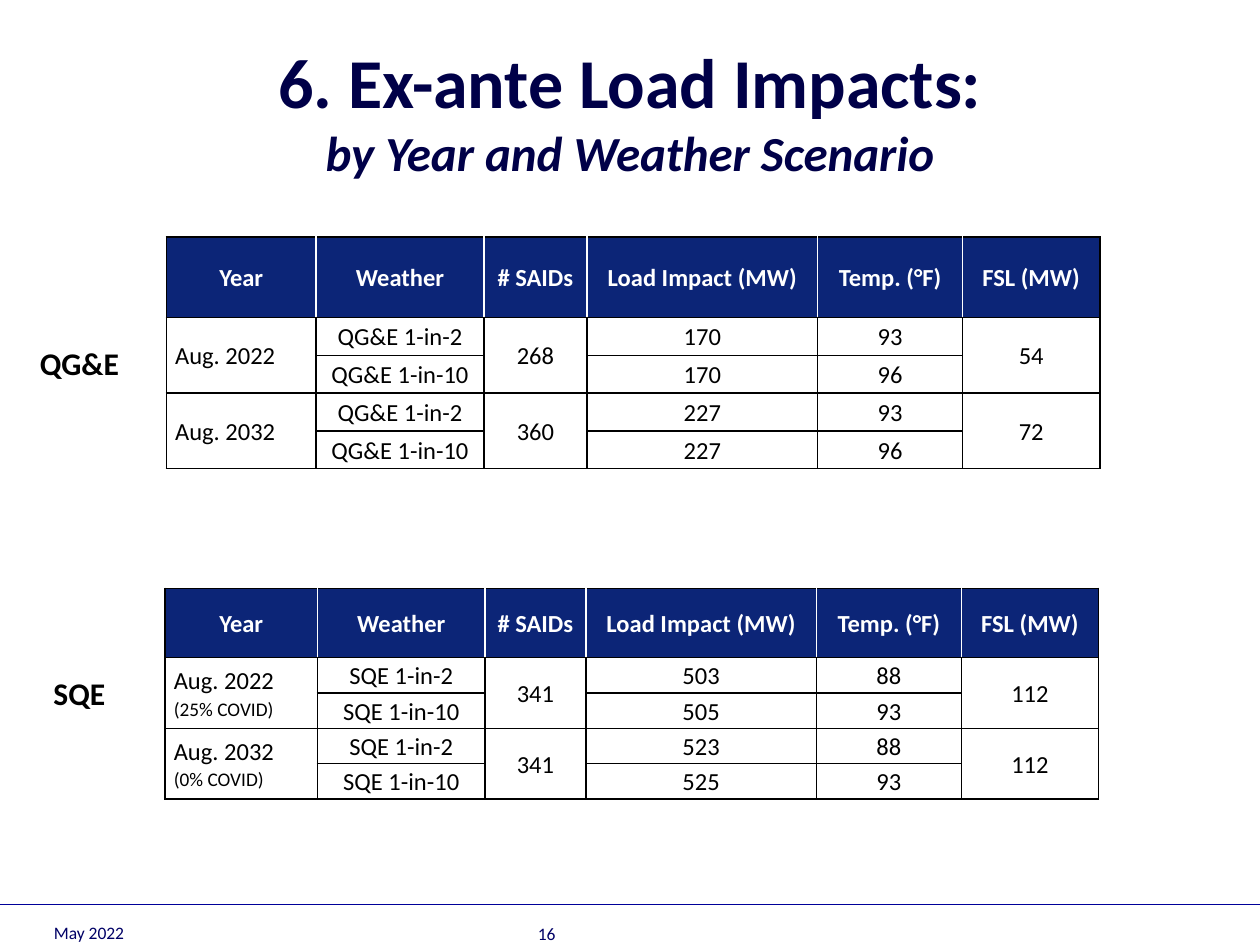
from lxml import etree
from pptx import Presentation
from pptx import util as u
from pptx.dml.color import RGBColor
from pptx.enum import shapes, text
from pptx.oxml.ns import qn

# Content
TITLE = [("6. Ex-ante Load Impacts:", {}),
         ("by Year and Weather Scenario", {"size": 28, "italic": True})]
FOOTER = [("May 2022", 0.33, 7.01), ("16", 4.17, 7.02)]
HEADERS = ["Year", "Weather", "# SAIDs", "Load Impact (MW)", "Temp. (°F)", "FSL (MW)"]
SCENARIOS = ["1-in-2", "1-in-10"]
# Each year: label, note, SAIDs, FSL, then (load impact, temperature) per scenario
UTILITIES = [
    {"name": "QG&E", "left": 1.32, "top": 1.88, "label_top": 2.68,
     "columns": [1.19, 1.33, 0.82, 1.83, 1.15, 1.09], "rows": (0.64, 0.3),
     "years": [("Aug. 2022", None, 268, 54, [(170, 93), (170, 96)]),
               ("Aug. 2032", None, 360, 72, [(227, 93), (227, 96)])]},
    {"name": "SQE", "left": 1.31, "top": 4.67, "label_top": 5.3,
     "columns": [1.21, 1.33, 0.8, 1.83, 1.15, 1.09], "rows": (0.55, 0.28),
     "years": [("Aug. 2022", "(25% COVID)", 341, 112, [(503, 88), (505, 93)]),
               ("Aug. 2032", "(0% COVID)", 341, 112, [(523, 88), (525, 93)])]},
]

THEME = {
    "font": "Calibri", "title": "000048", "footer": "000066", "rule": "000099",
    "header": "0C2577", "white": "FFFFFF", "black": "000000",
    "title_size": 40, "label_size": 18, "cell_size": 14, "note_size": 11, "footer_size": 10,
}
ALIGN = text.PP_ALIGN
ANCHOR = text.MSO_ANCHOR


def color(name):
    return RGBColor.from_string(THEME[name])


def write(frame, lines, size, ink, bold=False, align=ALIGN.CENTER, spacing=None,
          line_breaks=False):
    """Write (text, overrides) lines as paragraphs, or as one broken paragraph."""
    if isinstance(lines, str):
        lines = [(lines, {})]
    paragraph = frame.paragraphs[0]
    for index, (words, overrides) in enumerate(lines):
        if index and line_breaks:
            paragraph.add_line_break()
        elif index:
            paragraph = frame.add_paragraph()
        paragraph.alignment = align
        if spacing:
            paragraph.line_spacing = spacing
        run = paragraph.add_run()
        run.text = words
        run.font.name = THEME["font"]
        run.font.size = u.Pt(overrides.get("size", size))
        run.font.bold = bold
        run.font.italic = overrides.get("italic", False)
        run.font.color.rgb = color(ink)


def add_text(slide, box, lines, anchor=ANCHOR.TOP, **format):
    frame = slide.shapes.add_textbox(*map(u.Inches, box)).text_frame
    frame.word_wrap = True
    frame.vertical_anchor = anchor
    write(frame, lines, **format)


def set_borders(cell, **sides):
    properties = cell._tc.get_or_add_tcPr()
    for position, side in enumerate("LRTB"):
        line = etree.Element(qn(f"a:ln{side}"), w=str(u.Pt(1)))
        fill = etree.SubElement(line, qn("a:solidFill"))
        etree.SubElement(fill, qn("a:srgbClr"), val=THEME[sides.get(side, "black")])
        properties.insert(position, line)


def fill_cell(cell, lines, ink="black", bold=False, align=ALIGN.CENTER):
    write(cell.text_frame, lines, size=THEME["cell_size"], ink=ink, bold=bold,
          align=align, spacing=1.07)


def add_utility(slide, utility):
    header_height, row_height = utility["rows"]
    heights = [header_height] + [row_height] * len(SCENARIOS) * len(utility["years"])
    columns = utility["columns"]
    table = slide.shapes.add_table(
        len(heights), len(columns), u.Inches(utility["left"]), u.Inches(utility["top"]),
        u.Inches(sum(columns)), u.Inches(sum(heights))).table
    table.first_row = table.horz_banding = False
    for column, width in zip(table.columns, columns):
        column.width = u.Inches(width)
    for row, height in zip(table.rows, heights):
        row.height = u.Inches(height)

    # Shared cell format
    for cell in table.iter_cells():
        cell.margin_left = cell.margin_right = u.Inches(0.07)
        cell.margin_top = cell.margin_bottom = 0
        cell.vertical_anchor = ANCHOR.MIDDLE
        cell.fill.background()

    # Header row
    last = len(HEADERS) - 1
    for index, header in enumerate(HEADERS):
        cell = table.cell(0, index)
        cell.fill.solid()
        cell.fill.fore_color.rgb = color("header")
        set_borders(cell, L="white" if index else "black",
                    R="white" if index < last else "black")
        fill_cell(cell, header, ink="white", bold=True)

    # Year blocks: merged cells around one row per weather scenario
    for block, (year, note, saids, fsl, results) in enumerate(utility["years"]):
        first = 1 + block * len(SCENARIOS)
        year_lines = [(year, {})]
        if note:
            year_lines.append((note, {"size": THEME["note_size"]}))
        for index, lines, align in [(0, year_lines, ALIGN.LEFT),
                                    (2, str(saids), ALIGN.CENTER),
                                    (last, str(fsl), ALIGN.CENTER)]:
            cell = table.cell(first, index)
            cell.merge(table.cell(first + len(SCENARIOS) - 1, index))
            fill_cell(cell, lines, align=align)
        for offset, (scenario, (impact, temperature)) in enumerate(zip(SCENARIOS, results)):
            row = first + offset
            fill_cell(table.cell(row, 1), f"{utility['name']} {scenario}")
            fill_cell(table.cell(row, 3), str(impact))
            fill_cell(table.cell(row, 4), str(temperature))
            for index in range(len(columns)):
                set_borders(table.cell(row, index))


def main():
    presentation = Presentation()
    presentation.slide_width, presentation.slide_height = u.Inches(10), u.Inches(7.5)
    slide = presentation.slides.add_slide(presentation.slide_layouts[6])

    # Footer rule and text
    rule = slide.shapes.add_connector(shapes.MSO_CONNECTOR.STRAIGHT, 0, u.Inches(7.18),
                                      u.Inches(10), u.Inches(7.18))
    rule.line.color.rgb = color("rule")
    rule.line.width = u.Pt(0.75)
    etree.SubElement(rule._element.spPr, qn("a:effectLst"))
    for words, left, top in FOOTER:
        add_text(slide, (left, top, 2.33, 0.52), words, anchor=ANCHOR.BOTTOM,
                 size=THEME["footer_size"], ink="footer", align=ALIGN.LEFT)

    # Title
    add_text(slide, (0.5, 0.25, 9, 1.25), TITLE, anchor=ANCHOR.MIDDLE,
             size=THEME["title_size"], ink="title", bold=True, line_breaks=True)

    # Tables and their side labels
    for utility in UTILITIES:
        add_utility(slide, utility)
        add_text(slide, (0.17, utility["label_top"], 0.92, 0.4), utility["name"],
                 size=THEME["label_size"], ink="black", bold=True)

    presentation.save("out.pptx")


if __name__ == "__main__":
    main()
